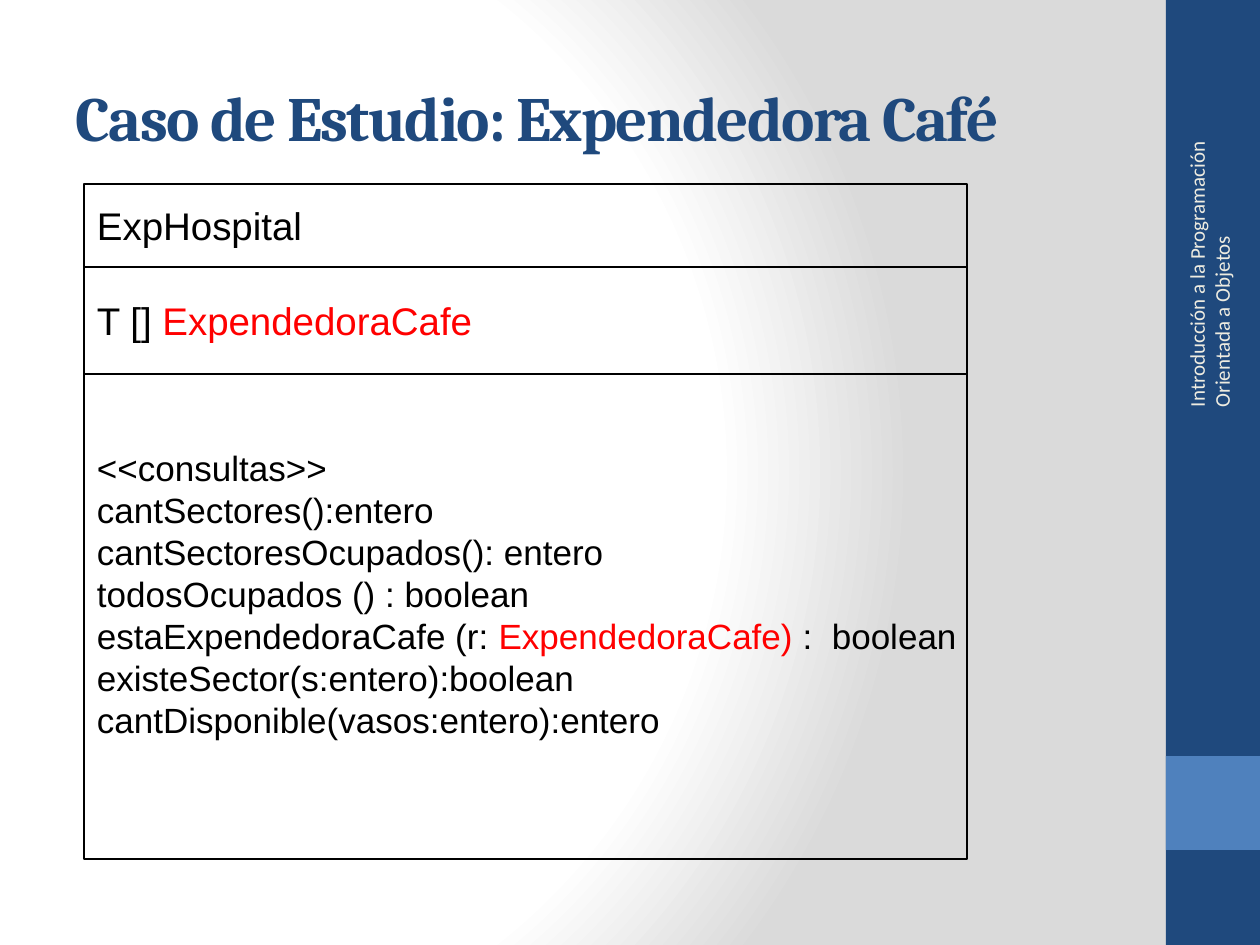
from pptx import Presentation
from pptx.dml.color import RGBColor
from pptx.enum.shapes import MSO_SHAPE as SHAPE
from pptx.enum.text import MSO_ANCHOR as ANCHOR, PP_ALIGN as ALIGN
from pptx.oxml import parse_xml
from pptx.oxml.ns import nsdecls
from pptx.util import Pt

# Content: a paragraph is a list of (text, colour) runs
NAVY, BLUE, CREAM, BLACK, RED = "1F497D", "4F81BD", "EEECE1", "000000", "FF0000"
TITLE = [[("Caso de Estudio: Expendedora Café", NAVY)]]
COURSE = [[("Introducción a la Programación Orientada a Objetos", CREAM)]]
CLASS_NAME = [[("ExpHospital", BLACK)]]
ATTRIBUTES = [[("T [] ", BLACK), ("ExpendedoraCafe", RED)]]
METHODS = [
    [("<<consultas>>", BLACK)],
    [("cantSectores():entero", BLACK)],
    [("cantSectoresOcupados(): entero", BLACK)],
    [("todosOcupados () : boolean", BLACK)],
    [("estaExpendedoraCafe (r: ", BLACK), ("ExpendedoraCafe) ", RED),
     (":  boolean", BLACK)],
    [("existeSector(s:entero):boolean", BLACK)],
    [("cantDisponible(vasos:entero):entero", BLACK)],
]
# Compartments of the class box: text, size, height, bottom inset (px)
COMPARTMENTS = [(CLASS_NAME, 22, 83, 6), (ATTRIBUTES, 22, 107, 6),
                (METHODS, 20, 485, 52)]
BOX_LEFT, BOX_TOP, BOX_WIDTH = 84, 184, 883
BARS = [(1166, 0, 94, 945, NAVY), (1166, 756, 94, 94, BLUE)]
GRADIENT = [(0, "FFFFFF"), (75, "FFFFFF"), (100, "DADADA")]


def px(n):
    return round(n * 914400 / 126)


def rgb(value):
    return RGBColor.from_string(value)


def write(sp, paragraphs, size, font, bold=None, spacing=None, right=13, bottom=6):
    tf = sp.text_frame
    tf.word_wrap = True
    tf.vertical_anchor = ANCHOR.MIDDLE
    tf.margin_left, tf.margin_right = px(13), px(right)
    tf.margin_top, tf.margin_bottom = px(6), px(bottom)
    for i, runs in enumerate(paragraphs):
        p = tf.add_paragraph() if i else tf.paragraphs[0]
        p.alignment = ALIGN.LEFT
        for text, color in runs:
            r = p.add_run()
            r.text = text
            r.font.size, r.font.name, r.font.bold = Pt(size), font, bold
            r.font.color.rgb = rgb(color)
            if spacing is not None:
                r.font._element.set("spc", str(spacing))


def add_rect(x, y, w, h, fill=None, line=None):
    sp = s.shapes.add_shape(SHAPE.RECTANGLE, px(x), px(y), px(w), px(h))
    sp.shadow.inherit = False
    if fill:
        sp.fill.solid()
        sp.fill.fore_color.rgb = rgb(fill)
    else:
        sp.fill.background()
    if line:
        sp.line.color.rgb = rgb(line)
        sp.line.width = Pt(0.75)
    else:
        sp.line.fill.background()
    return sp


prs = Presentation()
prs.slide_width, prs.slide_height = px(1260), px(945)
s = prs.slides.add_slide(prs.slide_layouts[5])

# Radial background
stops = "".join(f'<a:gs pos="{pos * 1000}"><a:srgbClr val="{color}"/></a:gs>'
                for pos, color in GRADIENT)
s._element.cSld.insert(0, parse_xml(
    f'<p:bg {nsdecls("p", "a")}><p:bgPr><a:gradFill rotWithShape="1">'
    f'<a:gsLst>{stops}</a:gsLst><a:path path="circle">'
    '<a:fillToRect l="20000" t="50000" r="100000" b="50000"/></a:path>'
    '</a:gradFill><a:effectLst/></p:bgPr></p:bg>'))

# Side bars and rotated course name
for *place, color in BARS:
    add_rect(*place, fill=color)
course = s.shapes.add_textbox(px(1041), px(227), px(336), px(50))
course.rotation = 270
write(course, COURSE, 12, "Calibri")

# Title
title = s.shapes.title
title.left, title.top, title.width, title.height = px(63), px(38), px(1050), px(157)
write(title, TITLE, 36, "Cambria", bold=True, spacing=-100)

# Class diagram, compartments stacked from the top
top = BOX_TOP
for paragraphs, size, height, bottom in COMPARTMENTS:
    box = add_rect(BOX_LEFT, top, BOX_WIDTH, height, line=BLACK)
    write(box, paragraphs, size, "Arial", right=0, bottom=bottom)
    top += height

prs.save("out.pptx")
